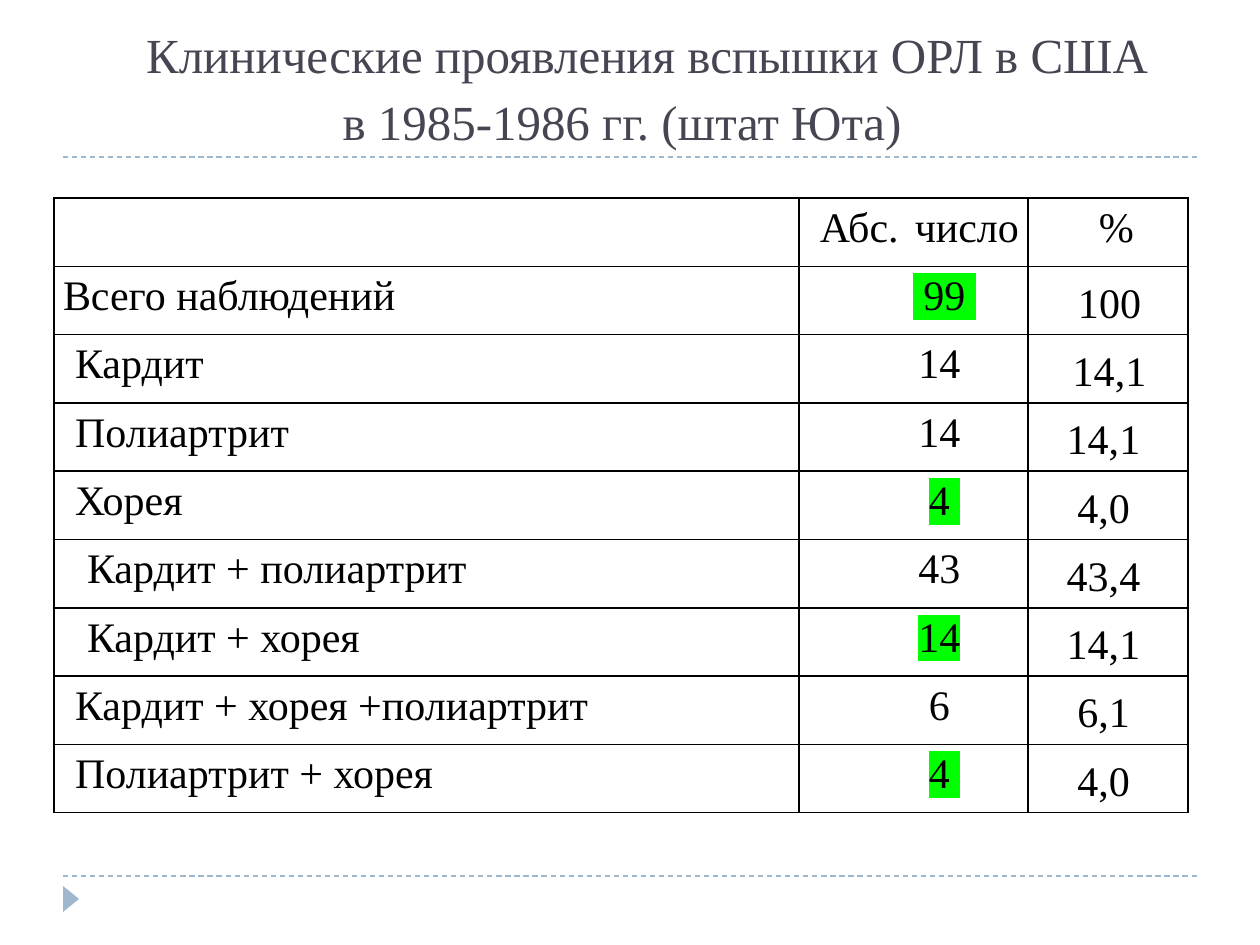
from lxml import etree
from pptx import Presentation
from pptx.dml.color import RGBColor
from pptx.enum.dml import MSO_LINE
from pptx.enum.shapes import MSO_CONNECTOR, MSO_SHAPE
from pptx.enum.text import MSO_ANCHOR, PP_ALIGN
from pptx.oxml.ns import qn
from pptx.util import Emu, Pt

EMU_PER_PX = 914400 / 126
TITLE_ONLY_LAYOUT = 5
CENTER, JUSTIFY = PP_ALIGN.CENTER, PP_ALIGN.JUSTIFY
TOP, MIDDLE, BOTTOM = MSO_ANCHOR.TOP, MSO_ANCHOR.MIDDLE, MSO_ANCHOR.BOTTOM
STRAIGHT, TRIANGLE = MSO_CONNECTOR.STRAIGHT, MSO_SHAPE.ISOSCELES_TRIANGLE
DASH = MSO_LINE.DASH

THEME = {
    "font": "Times New Roman",
    "title_size": 28,
    "table_size": 24,
    "title": "464653",
    "text": "000000",
    "accent": "9FB8CD",
    "highlight": "00FF00",
    "line_spacing": 1.15,
}

COLUMN_WIDTHS = [745, 229, 160]
CELL_MARGIN = 9
SMALL_INDENT, MEDIUM_INDENT, LARGE_INDENT = 12, 24, 62
BORDERS = ["a:lnL", "a:lnR", "a:lnT", "a:lnB"]

FINDINGS = [
    ("Всего наблюдений", 0, " 99 ", "", "100", SMALL_INDENT),
    ("Кардит ", SMALL_INDENT, "", "14 ", "14,1", SMALL_INDENT),
    ("Полиартрит ", SMALL_INDENT, "", "14 ", "14,1", 0),
    ("Хорея ", SMALL_INDENT, "4 ", "", "4,0", 0),
    ("Кардит + полиартрит ", MEDIUM_INDENT, "", "43 ", "43,4", 0),
    ("Кардит + хорея ", MEDIUM_INDENT, "14", " ", "14,1", 0),
    ("Кардит + хорея +полиартрит ", SMALL_INDENT, "", "6 ", "6,1", 0),
    ("Полиартрит + хорея ", SMALL_INDENT, "4 ", "", "4,0", 0),
]


def px(value):
    return Emu(round(value * EMU_PER_PX))


def format_paragraph(paragraph, alignment, indent, size, color):
    paragraph.alignment = alignment
    paragraph.line_spacing = THEME["line_spacing"]
    paragraph.space_before = Pt(0)
    paragraph.font.name = THEME["font"]
    paragraph.font.size = Pt(size)
    paragraph.font.color.rgb = RGBColor.from_string(color)
    properties = paragraph._p.get_or_add_pPr()
    properties.set("marL", "0")
    properties.set("indent", str(px(indent)))


presentation = Presentation()
presentation.slide_width = px(1260)
presentation.slide_height = px(945)
slide = presentation.slides.add_slide(presentation.slide_layouts[TITLE_ONLY_LAYOUT])
accent = RGBColor.from_string(THEME["accent"])

for line_y in (876, 157):
    rule = slide.shapes.add_connector(STRAIGHT, px(63), px(line_y), px(1197), px(line_y))
    rule.line.color.rgb = accent
    rule.line.width = Pt(0.75)
    rule.line.dash_style = DASH
    etree.SubElement(rule._element.spPr, qn("a:effectLst"))

marker = slide.shapes.add_shape(TRIANGLE, px(58), px(891), px(26), px(16))
marker.rotation = 90
marker.shadow.inherit = False
marker.fill.solid()
marker.fill.fore_color.rgb = accent
marker.line.fill.background()

title = slide.shapes.title
title.left, title.top, title.width, title.height = px(35), px(21), px(1162), px(136)
title.text_frame.text = "Клинические проявления вспышки ОРЛ в США\v в 1985-1986 гг. (штат Юта)"
title.text_frame.vertical_anchor = BOTTOM
format_paragraph(
    title.text_frame.paragraphs[0], CENTER, LARGE_INDENT, THEME["title_size"], THEME["title"]
)

table = slide.shapes.add_table(
    len(FINDINGS) + 1, len(COLUMN_WIDTHS), px(54), px(198), px(sum(COLUMN_WIDTHS)), px(615)
).table
table.first_row = False
table.horz_banding = False
for column, width in zip(table.columns, COLUMN_WIDTHS):
    column.width = px(width)

table_rows = [
    [
        ("", "", JUSTIFY, 0, TOP),
        ("", "Абс. число ", JUSTIFY, SMALL_INDENT, TOP),
        ("", "%", JUSTIFY, LARGE_INDENT, TOP),
    ]
]
for label, label_indent, marked_count, count, percent, percent_indent in FINDINGS:
    table_rows.append([
        ("", label, JUSTIFY, label_indent, TOP),
        (marked_count, count, CENTER, LARGE_INDENT, TOP),
        ("", percent, CENTER, percent_indent, MIDDLE),
    ])

for row, contents in zip(table.rows, table_rows):
    for cell, (marked, plain, alignment, indent, anchor) in zip(row.cells, contents):
        cell.margin_left = px(0 if anchor == MIDDLE else CELL_MARGIN)
        cell.margin_right = px(CELL_MARGIN)
        cell.margin_top = cell.margin_bottom = 0
        cell.vertical_anchor = anchor

        paragraph = cell.text_frame.paragraphs[0]
        format_paragraph(paragraph, alignment, indent, THEME["table_size"], THEME["text"])
        if marked:
            run = paragraph.add_run()
            run.text = marked
            highlight = etree.SubElement(run._r.get_or_add_rPr(), qn("a:highlight"))
            etree.SubElement(highlight, qn("a:srgbClr"), val=THEME["highlight"])
        if plain:
            paragraph.add_run().text = plain

        cell_properties = cell._tc.get_or_add_tcPr()
        for border in BORDERS:
            line = etree.SubElement(cell_properties, qn(border), w=str(Pt(1)))
            fill = etree.SubElement(line, qn("a:solidFill"))
            etree.SubElement(fill, qn("a:srgbClr"), val=THEME["text"])
        cell.fill.background()

presentation.save("out.pptx")
